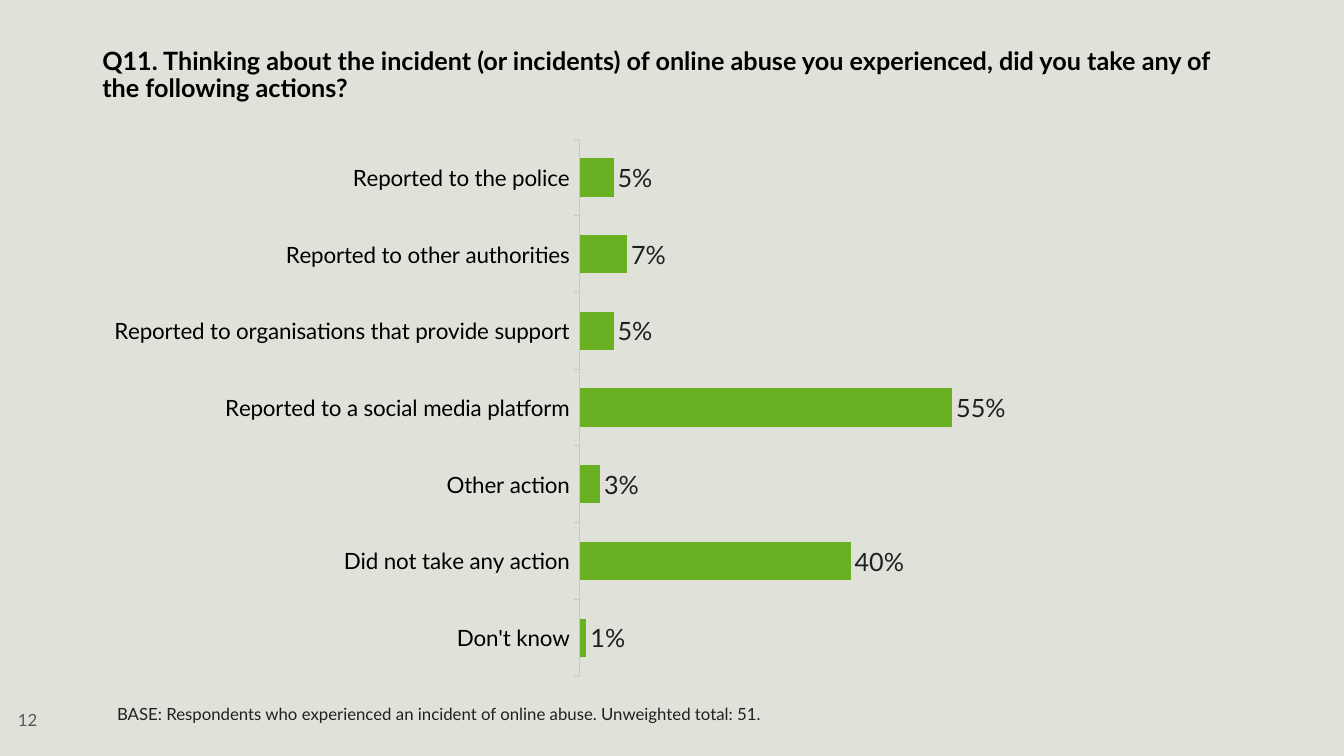
import pptx
import pptx.chart.data
import pptx.dml.color
import pptx.enum.chart
import pptx.enum.text
import pptx.oxml
import pptx.oxml.ns
import pptx.util

Pt = pptx.util.Pt
RGB = pptx.dml.color.RGBColor

PAPER = RGB(0xE0, 0xE2, 0xDA)
BLACK = RGB(0, 0, 0)
INK = RGB(0x1F, 0x20, 0x21)
GREY = RGB(0x55, 0x58, 0x5A)
RULE = RGB(0xC8, 0xC8, 0xC8)
GREEN = RGB(0x6A, 0xB0, 0x23)
FACE = "Lato"

TITLE = ("Q11. Thinking about the incident (or incidents) of online abuse "
         "you experienced, did you take any of the following actions?")
BASE = ("BASE: Respondents who experienced an incident of online abuse. "
        "Unweighted total: 51.")
ACTIONS = {
    "Reported to the police": 0.05,
    "Reported to other authorities": 0.07,
    "Reported to organisations that provide support": 0.05,
    "Reported to a social media platform": 0.55,
    "Other action": 0.03,
    "Did not take any action": 0.4,
    "Don't know": 0.01,
}


def set_font(font, size, color, bold=False):
    font.name = FACE
    font.size = Pt(size)
    font.bold = bold
    font.color.rgb = color


def add_text(slide, box, text, size, color, bold=False, lead=0.9, indent=0):
    """Add one middle-anchored paragraph, set in by indent points."""
    shape = slide.shapes.add_textbox(*map(Pt, box))
    frame = shape.text_frame
    frame.word_wrap = True
    frame.vertical_anchor = pptx.enum.text.MSO_ANCHOR.MIDDLE
    frame.text = text
    para = frame.paragraphs[0]
    para.line_spacing = lead
    if indent:
        props = para._p.get_or_add_pPr()
        props.set("marL", str(Pt(indent)))
        props.set("indent", "0")
    set_font(para.runs[0].font, size, color, bold)


def place_plot(chart, x, y, w, h):
    """Fix the inner plot area, in fractions of the chart."""
    area = chart._chartSpace.chart.plotArea
    for old in area.findall(pptx.oxml.ns.qn("c:layout")):
        area.remove(old)
    sides = "".join(f'<c:{key} val="{val}"/>' for key, val in
                    (("x", x), ("y", y), ("w", w), ("h", h)))
    area.insert(0, pptx.oxml.parse_xml(
        f'<c:layout {pptx.oxml.ns.nsdecls("c")}><c:manualLayout>'
        '<c:layoutTarget val="inner"/><c:xMode val="edge"/>'
        f'<c:yMode val="edge"/>{sides}</c:manualLayout></c:layout>'))


def add_bars(slide, box):
    kinds = pptx.enum.chart
    data = pptx.chart.data.CategoryChartData(number_format="0%")
    data.categories = list(ACTIONS)
    data.add_series("Series 1", list(ACTIONS.values()))
    chart = slide.shapes.add_chart(
        kinds.XL_CHART_TYPE.BAR_CLUSTERED, *map(Pt, box), data).chart
    chart.has_title = False
    chart.has_legend = False
    set_font(chart.font, 18, INK)
    place_plot(chart, 0.41, 0.02, 0.57, 0.96)

    cats = chart.category_axis
    cats.reverse_order = True
    cats.has_major_gridlines = False
    cats.major_tick_mark = kinds.XL_TICK_MARK.OUTSIDE
    cats.tick_label_position = kinds.XL_TICK_LABEL_POSITION.LOW
    cats.format.line.color.rgb = RULE
    cats.format.line.width = Pt(0.75)
    set_font(cats.tick_labels.font, 16, BLACK)

    scale = chart.value_axis
    scale.minimum_scale = 0
    scale.maximum_scale = 1
    scale.has_major_gridlines = False
    scale.visible = False

    plot = chart.plots[0]
    plot.gap_width = 100
    plot.vary_by_categories = False
    fill = plot.series[0].format.fill
    fill.solid()
    fill.fore_color.rgb = GREEN
    plot.has_data_labels = True
    labels = plot.data_labels
    labels.show_value = True
    labels.position = kinds.XL_LABEL_POSITION.OUTSIDE_END
    labels.number_format = "0%"
    labels.number_format_is_linked = False
    set_font(labels.font, 18, INK)


def main():
    deck = pptx.Presentation()
    deck.slide_width, deck.slide_height = Pt(960), Pt(540)
    slide = deck.slides.add_slide(deck.slide_layouts[6])
    fill = slide.background.fill
    fill.solid()
    fill.fore_color.rgb = PAPER

    add_text(slide, (66, 28.5, 828, 51), TITLE, 18, BLACK, bold=True)
    add_bars(slide, (66, 91.5, 849, 399.5))
    add_text(slide, (58.5, 496.5, 749.5, 29), BASE, 12, INK, lead=0.8, indent=18)
    add_text(slide, (5.75, 500.5, 44, 29), "12", 12, GREY)
    deck.save("out.pptx")


if __name__ == "__main__":
    main()
